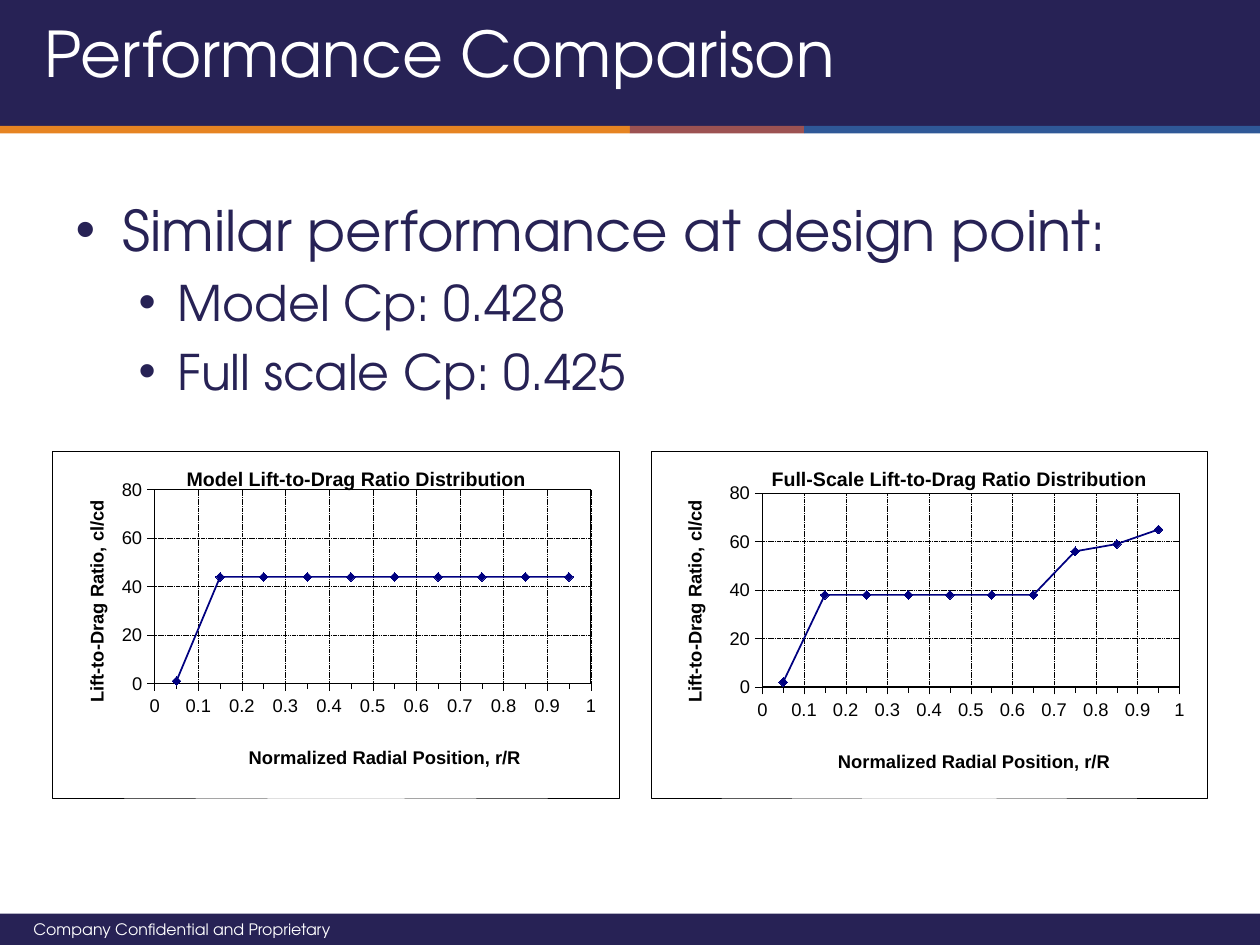
"""Build the performance comparison slide with its two lift-to-drag charts."""
from lxml.etree import SubElement
from pptx import Presentation
from pptx.chart.data import XyChartData
from pptx.dml.color import RGBColor
from pptx.enum.chart import XL_CHART_TYPE, XL_MARKER_STYLE, XL_TICK_MARK
from pptx.enum.dml import MSO_LINE
from pptx.enum.shapes import MSO_SHAPE
from pptx.enum.text import MSO_ANCHOR, PP_ALIGN
from pptx.oxml import parse_xml
from pptx.oxml.ns import nsdecls, qn
from pptx.util import Pt

NAVY, WHITE, BLACK, SERIES_BLUE = "272255", "FFFFFF", "000000", "000080"
LEVELS = [dict(margin=27, hanging=27, size=32), dict(margin=58.5, hanging=22.5, size=28)]


def color(value):
    return RGBColor.from_string(value)


def write(paragraph, text, size=10.5, font="TeX Gyre Adventor", fill=NAVY, bold=False):
    paragraph.text = text
    for target in (paragraph.font, paragraph.runs[0].font):
        target.name, target.size, target.bold = font, Pt(size), bold
        target.color.rgb = color(fill)


def set_line(line, fill=BLACK, width=0.25):
    line.color.rgb = color(fill)
    line.width = Pt(width)


def set_layout(element, position, index, inner=False):
    for old in element.findall(qn("c:layout")):
        element.remove(old)
    layout = parse_xml(f"<c:layout {nsdecls('c')}/>")
    manual = SubElement(layout, qn("c:manualLayout"))
    names = ["xMode", "yMode", "x", "y", "w", "h"][:len(position) + 2]
    if inner:
        SubElement(manual, qn("c:layoutTarget")).set("val", "inner")
    for name, value in zip(names, ["edge", "edge", *position]):
        SubElement(manual, qn(f"c:{name}")).set("val", str(value))
    element.insert(index, layout)


def box_format(width):
    return parse_xml(
        f'<c:spPr {nsdecls("c", "a")}><a:solidFill><a:srgbClr val="{WHITE}"/></a:solidFill>'
        f'<a:ln w="{Pt(width)}"><a:solidFill><a:srgbClr val="{BLACK}"/></a:solidFill></a:ln></c:spPr>')


class SlideBuilder:
    def __init__(self, slide):
        self.slide = slide

    def bar(self, left, top, width, height, fill):
        shape = self.slide.shapes.add_shape(
            MSO_SHAPE.RECTANGLE, Pt(left), Pt(top), Pt(width), Pt(height))
        shape.shadow.inherit = False
        shape.fill.solid()
        shape.fill.fore_color.rgb = color(fill)
        shape.line.fill.background()

    def place(self, shape, left, top, width, height):
        shape.left, shape.top, shape.width, shape.height = map(Pt, (left, top, width, height))
        return shape.text_frame

    def title(self, text, *box):
        frame = self.place(self.slide.shapes.title, *box)
        frame.vertical_anchor = MSO_ANCHOR.MIDDLE
        frame.paragraphs[0].alignment = PP_ALIGN.LEFT
        write(frame.paragraphs[0], text, size=36, fill=WHITE)

    def bullets(self, items, *box):
        frame = self.place(self.slide.placeholders[1], *box)
        for index, (level, text) in enumerate(items):
            paragraph = frame.add_paragraph() if index else frame.paragraphs[0]
            style = LEVELS[level]
            paragraph.level = level
            paragraph.space_before = Pt(style["size"] * 0.2 if index else 0)
            properties = paragraph._p.get_or_add_pPr()
            properties.set("marL", str(Pt(style["margin"])))
            properties.set("indent", str(-Pt(style["hanging"])))
            bullet_color = SubElement(properties, qn("a:buClr"))
            SubElement(bullet_color, qn("a:srgbClr")).set("val", NAVY)
            SubElement(properties, qn("a:buFont")).set("typeface", "Arial")
            SubElement(properties, qn("a:buChar")).set("char", "•")
            write(paragraph, text, size=style["size"])

    def label(self, text, *box):
        frame = self.slide.shapes.add_textbox(*map(Pt, box)).text_frame
        frame.word_wrap = True
        write(frame.paragraphs[0], text, size=9, fill=WHITE)

    def chart_label(self, title, text, position, size=10.5):
        write(title.text_frame.paragraphs[0], text, size=size, font="Arial", fill=BLACK, bold=True)
        set_layout(title._element, position, 1)

    def axis(self, axis, maximum, unit, number_format):
        axis.minimum_scale, axis.maximum_scale, axis.major_unit = 0, maximum, unit
        axis.has_major_gridlines = True
        axis.major_tick_mark = XL_TICK_MARK.OUTSIDE
        axis.tick_labels.number_format = number_format
        axis.tick_labels.number_format_is_linked = False
        set_line(axis.format.line)
        gridline = axis.major_gridlines.format.line
        set_line(gridline)
        gridline.dash_style = MSO_LINE.SQUARE_DOT

    def scatter(self, box, title, values, plot, title_at, horizontal_at, vertical_at):
        data = XyChartData()
        points = data.add_series("Series 1")
        for index, value in enumerate(values):
            points.add_data_point(round(0.05 + index * 0.1, 2), value)
        chart = self.slide.shapes.add_chart(
            XL_CHART_TYPE.XY_SCATTER_LINES, *map(Pt, box), data).chart
        chart.has_legend = False
        chart.font.name, chart.font.size = "Arial", Pt(10.5)
        chart.font.color.rgb = color(BLACK)
        chart.has_title = True
        self.chart_label(chart.chart_title, title, title_at, size=11.2)

        horizontal, vertical = chart.category_axis, chart.value_axis
        self.axis(horizontal, 1, 0.1, "General")
        horizontal.minor_unit = 0.05
        horizontal.minor_tick_mark = XL_TICK_MARK.OUTSIDE
        self.axis(vertical, 80, 20, "0")
        vertical.minor_tick_mark = XL_TICK_MARK.NONE
        self.chart_label(horizontal.axis_title, "Normalized Radial Position, r/R", horizontal_at)
        self.chart_label(vertical.axis_title, "Lift-to-Drag Ratio, cl/cd", vertical_at)
        vertical.axis_title.text_frame._txBody.bodyPr.set("rot", "-5400000")

        chart.plots[0].vary_by_categories = False
        series = chart.plots[0].series[0]
        series.smooth = False
        set_line(series.format.line, SERIES_BLUE, 1)
        series.marker.style, series.marker.size = XL_MARKER_STYLE.DIAMOND, 5
        series.marker.format.fill.solid()
        series.marker.format.fill.fore_color.rgb = color(SERIES_BLUE)
        set_line(series.marker.format.line, SERIES_BLUE)

        chart_space = chart._chartSpace
        plot_area = chart_space.chart.plotArea
        set_layout(plot_area, plot, 0, inner=True)
        plot_area.append(box_format(0.75))
        chart_space.chart.addnext(box_format(0.25))


def main():
    presentation = Presentation()
    presentation.slide_width, presentation.slide_height = Pt(720), Pt(540)
    builder = SlideBuilder(presentation.slides.add_slide(presentation.slide_layouts[1]))

    builder.bar(0, 522, 720, 18, NAVY)
    builder.bar(0, 0, 720, 72, NAVY)
    left = 0
    for width, fill in ((360, "E68422"), (99.5, "9C5252"), (260.5, "2F5897")):
        builder.bar(left, 72, width, 4.3, fill)
        left += width
    builder.label("Company Confidential and Proprietary", 12, 522, 318, 18)

    # The placeholders precede the bars, so they are raised above them.
    tree = builder.slide.shapes._spTree
    for placeholder in list(builder.slide.placeholders):
        tree.append(placeholder._element)
    builder.title("Performance Comparison", 18, 0, 666, 60)
    builder.bullets([(0, "Similar performance at design point:"),
                     (1, "Model Cp: 0.428"),
                     (1, "Full scale Cp: 0.425")], 36, 108, 648, 126)

    builder.scatter((372, 258, 318, 198), "Full-Scale Lift-to-Drag Ratio Distribution",
                    [2] + [38] * 6 + [56, 59, 65], (0.2, 0.12, 0.75, 0.56),
                    (0.21, 0.03), (0.33, 0.85), (0.05, 0.13))
    builder.scatter((30, 258, 324, 198), "Model Lift-to-Drag Ratio Distribution",
                    [1] + [44] * 9, (0.18, 0.11, 0.77, 0.56),
                    (0.23, 0.03), (0.34, 0.84), (0.05, 0.13))
    presentation.save("out.pptx")


if __name__ == "__main__":
    main()
